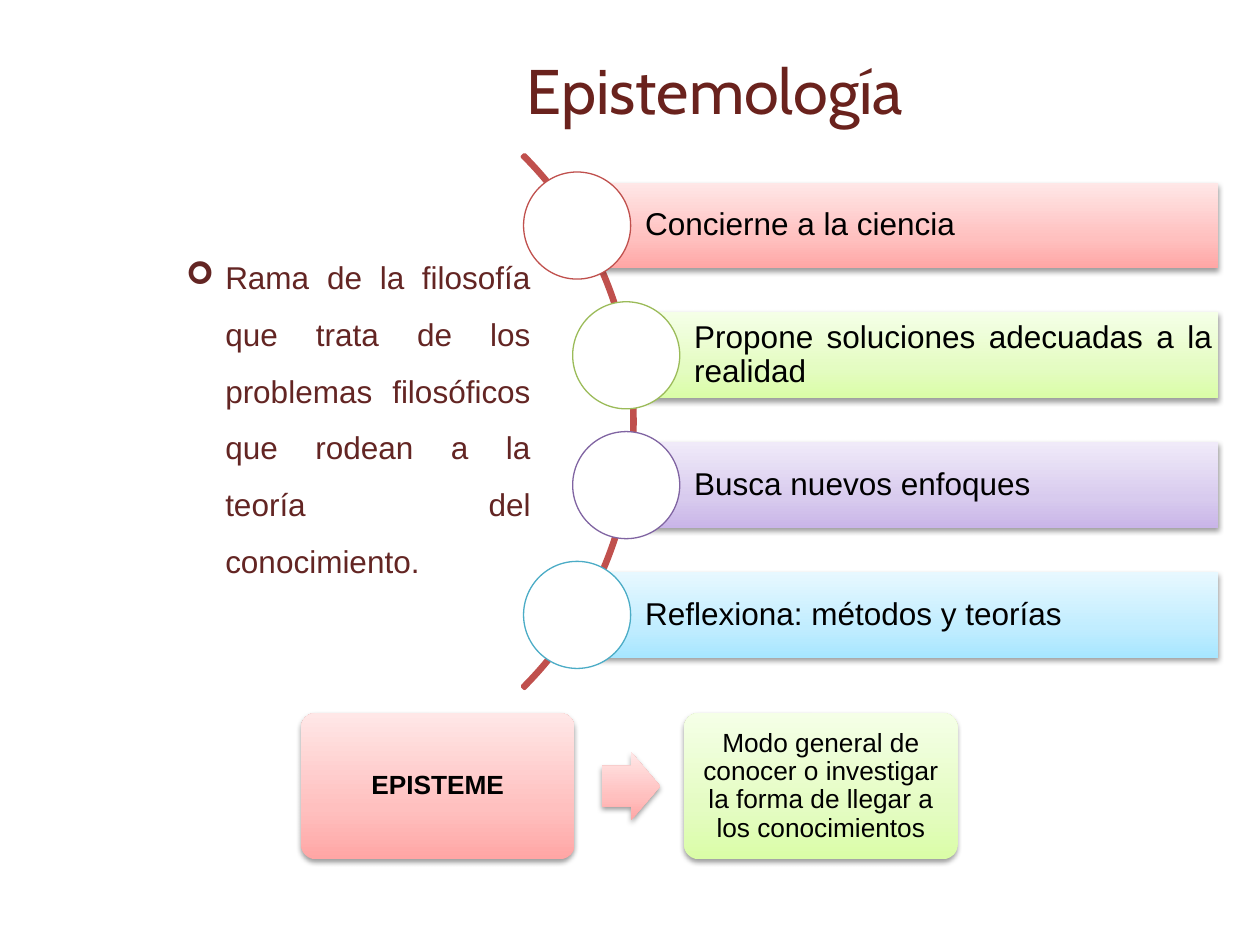
"""Build the Epistemología slide: definition, curved list of traits and episteme flow."""
from copy import deepcopy

from lxml.etree import SubElement
from pptx import Presentation
from pptx.dml.color import RGBColor
from pptx.enum.shapes import MSO_SHAPE
from pptx.enum.text import MSO_ANCHOR, PP_ALIGN
from pptx.oxml.ns import qn
from pptx.util import Inches, Pt

BLACK = RGBColor(0x00, 0x00, 0x00)
WHITE = RGBColor(0xFF, 0xFF, 0xFF)
TITLE_RED = RGBColor(0x6A, 0x22, 0x1D)
BODY_RED = RGBColor(0x63, 0x25, 0x23)
RED = RGBColor(0xC0, 0x50, 0x4D)
GREEN = RGBColor(0x9B, 0xBB, 0x59)
PURPLE = RGBColor(0x80, 0x64, 0xA2)
BLUE = RGBColor(0x4B, 0xAC, 0xC6)
RED_FADE = (RGBColor(0xFF, 0xA6, 0xA5), RGBColor(0xFF, 0xC0, 0xBF), RGBColor(0xFF, 0xE7, 0xE7))
GREEN_FADE = (RGBColor(0xDA, 0xFD, 0xA7), RGBColor(0xE4, 0xFC, 0xC2), RGBColor(0xF5, 0xFF, 0xE7))
PURPLE_FADE = (RGBColor(0xC9, 0xB5, 0xE8), RGBColor(0xD8, 0xCB, 0xEE), RGBColor(0xF0, 0xEA, 0xF9))
BLUE_FADE = (RGBColor(0xA7, 0xE6, 0xFF), RGBColor(0xC1, 0xED, 0xFF), RGBColor(0xE7, 0xF8, 0xFF))

prs = Presentation()
prs.slide_width, prs.slide_height = Inches(10), Inches(7.5)
slide = prs.slides.add_slide(prs.slide_layouts[6])


def add_faded_shape(kind, left, top, width, height, fade):
    shape = slide.shapes.add_shape(kind, Inches(left), Inches(top), Inches(width), Inches(height))
    shape.line.fill.background()
    shape.fill.gradient()
    shape.fill.gradient_angle = 90
    stop_list = shape.element.spPr.find(".//" + qn("a:gsLst"))
    stop_list.append(deepcopy(stop_list[-1]))
    for stop, position, color in zip(shape.fill.gradient_stops, (0, 0.35, 1), fade):
        stop.position = position
        stop.color.rgb = color
    shape.shadow.inherit = False
    effects = shape.element.spPr.find(qn("a:effectLst"))
    shadow = SubElement(effects, qn("a:outerShdw"), blurRad=str(Pt(3.1)), dist=str(Pt(1.6)),
                        dir="5400000", rotWithShape="0")
    shadow_color = SubElement(shadow, qn("a:srgbClr"), val="000000")
    SubElement(shadow_color, qn("a:alpha"), val="38000")
    return shape


def write_text(shape, text, size, color, align, spacing, margins, font="Arial"):
    frame = shape.text_frame
    frame.word_wrap = True
    frame.vertical_anchor = MSO_ANCHOR.MIDDLE
    frame.margin_left, frame.margin_top, frame.margin_right, frame.margin_bottom = map(Inches, margins)
    paragraph = frame.paragraphs[0]
    paragraph.text = text
    paragraph.alignment = align
    paragraph.line_spacing = spacing
    paragraph.font.name = font
    paragraph.font.size = Pt(size)
    paragraph.font.color.rgb = color
    return paragraph


title = slide.shapes.add_textbox(Inches(1.85), Inches(0.3), Inches(7.65), Inches(0.82))
write_text(title, "Epistemología", 36, TITLE_RED, PP_ALIGN.CENTER, 1.0, (0.1, 0.05, 0.1, 0.05), "Cabin")

definition = slide.shapes.add_textbox(Inches(1.38), Inches(1.85), Inches(2.93), Inches(2.83))
bullet_props = definition.text_frame.paragraphs[0]._p.get_or_add_pPr()
bullet_props.set("marL", str(Inches(0.31)))
bullet_props.set("indent", str(Inches(-0.31)))
SubElement(bullet_props, qn("a:buFont"), typeface="Wingdings")
SubElement(bullet_props, qn("a:buChar"), char="➢")
write_text(definition,
           "Rama de la filosofía que trata de los problemas filosóficos que rodean a la teoría del conocimiento.",
           18, BODY_RED, PP_ALIGN.JUSTIFY, 1.5, (0.1, 0.05, 0.1, 0.05))
definition.text_frame.vertical_anchor = MSO_ANCHOR.TOP

arc = slide.shapes.add_shape(MSO_SHAPE.BLOCK_ARC, Inches(-0.95), Inches(0.35), Inches(5.99), Inches(5.99))
for index, value in enumerate((189, 27, 0.004)):
    arc.adjustments[index] = value
arc.fill.background()
arc.line.color.rgb = RED
arc.line.width = Pt(2)
arc.shadow.inherit = False

BAR_RIGHT, BAR_TOP, BAR_HEIGHT, BAR_STEP, CIRCLE = 9.67, 1.45, 0.68, 1.03, 0.85
traits = [
    ("Concierne a la ciencia", 4.58, RED, RED_FADE),
    ("Propone soluciones adecuadas a la realidad", 4.97, GREEN, GREEN_FADE),
    ("Busca nuevos enfoques", 4.97, PURPLE, PURPLE_FADE),
    ("Reflexiona: métodos y teorías", 4.58, BLUE, BLUE_FADE),
]
for row, (trait, left, accent, fade) in enumerate(traits):
    top = BAR_TOP + row * BAR_STEP
    bar = add_faded_shape(MSO_SHAPE.RECTANGLE, left, top, BAR_RIGHT - left, BAR_HEIGHT, fade)
    write_text(bar, trait, 18, BLACK, PP_ALIGN.JUSTIFY, 0.9, (0.54, 0.05, 0.05, 0.05))
    circle = slide.shapes.add_shape(
        MSO_SHAPE.OVAL, Inches(left - CIRCLE / 2), Inches(top + (BAR_HEIGHT - CIRCLE) / 2),
        Inches(CIRCLE), Inches(CIRCLE))
    circle.fill.solid()
    circle.fill.fore_color.rgb = WHITE
    circle.line.color.rgb = accent
    circle.line.width = Pt(0.75)
    circle.shadow.inherit = False

flow = [
    ("EPISTEME", 2.39, RED_FADE, True),
    ("Modo general de conocer o investigar la forma de llegar a los conocimientos", 5.43, GREEN_FADE, False),
]
for text, left, fade, bold in flow:
    card = add_faded_shape(MSO_SHAPE.ROUNDED_RECTANGLE, left, 5.66, 2.17, 1.16, fade)
    card.adjustments[0] = 0.1
    label = write_text(card, text, 15, BLACK, PP_ALIGN.CENTER, 0.9, (0.06,) * 4)
    label.font.bold = bold

arrow = add_faded_shape(MSO_SHAPE.RIGHT_ARROW, 4.78, 5.97, 0.46, 0.54, RED_FADE)
arrow.adjustments[0] = 0.6
arrow.adjustments[1] = 0.5

prs.save("out.pptx")
